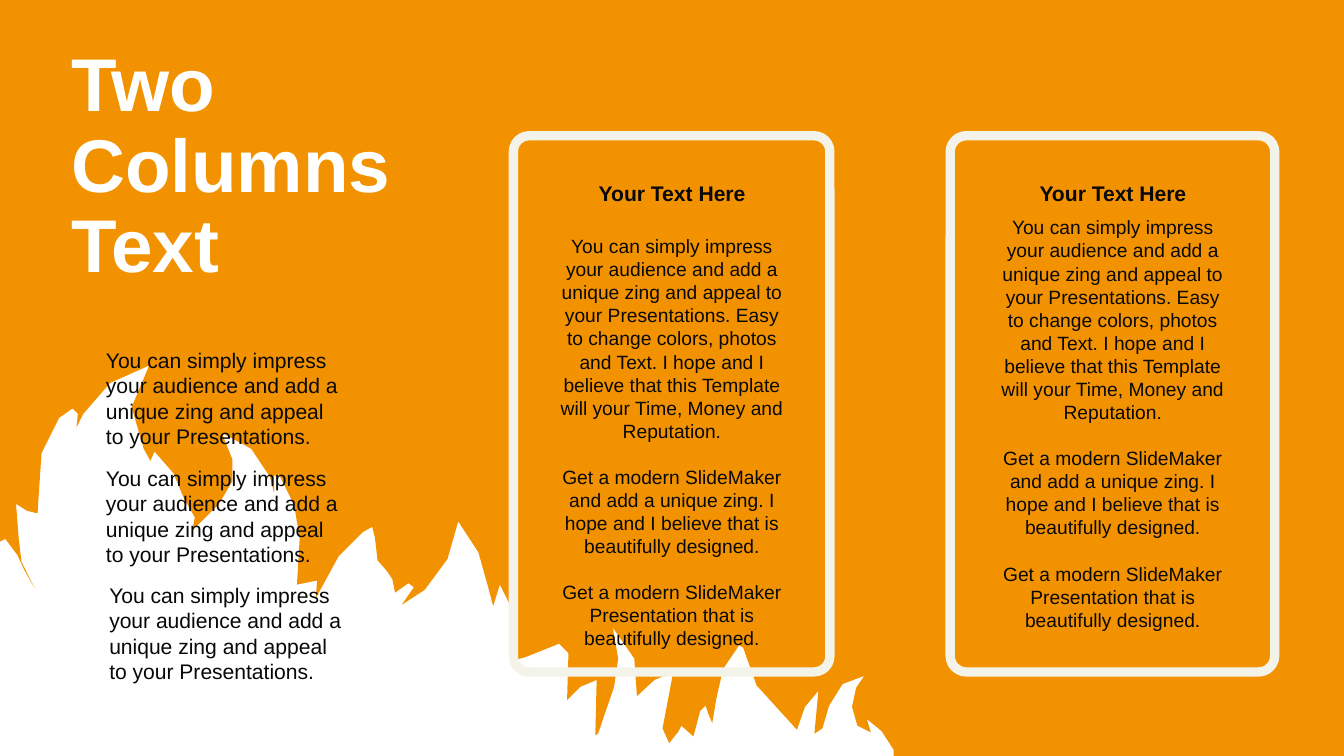
import lxml.etree
import pptx
import pptx.dml.color
import pptx.enum.shapes
import pptx.enum.text
import pptx.oxml.ns
import pptx.util

PX = 4572  # EMU per px, 200 px to the inch
WIDTH, HEIGHT = 2000, 1125
GRID = 2  # px per step of the flame outline
COLORS = {"orange": "F39200", "frame": "F3F3EA", "ink": "080808", "white": "FFFFFF"}
ALIGN = pptx.enum.text.PP_ALIGN
ANCHOR = pptx.enum.text.MSO_ANCHOR
SHAPE = pptx.enum.shapes.MSO_SHAPE

FLAME_EDGE = [
    (0, 403), (4, 401), (13, 413), (18, 424), (26, 438), (16, 418), (14, 401),
    (12, 375), (20, 380), (28, 382), (29, 366), (31, 337), (44, 311), (54, 304),
    (58, 308), (57, 318), (62, 308), (82, 285), (111, 272), (98, 303), (107, 334),
    (112, 343), (115, 336), (129, 352), (137, 371), (145, 385), (143, 395),
    (163, 375), (173, 358), (173, 342), (165, 322), (187, 334), (201, 355),
    (204, 367), (204, 354), (208, 354), (219, 376), (223, 401), (221, 435),
    (236, 432), (235, 445), (240, 436), (252, 414), (270, 396), (277, 392),
    (279, 400), (281, 417), (288, 425), (292, 431), (294, 441), (304, 434),
    (308, 437), (299, 450), (316, 439), (333, 416), (341, 388), (356, 411),
    (363, 436), (367, 451), (372, 435), (379, 449), (379, 480), (380, 492),
    (391, 489), (416, 479), (423, 486), (422, 521), (432, 511), (444, 506),
    (443, 547), (445, 546), (457, 511), (460, 490), (456, 467), (472, 490),
    (474, 518), (487, 506), (501, 500), (493, 542), (498, 553), (505, 544),
    (507, 540), (516, 548), (521, 529), (525, 525), (527, 531), (530, 538),
    (533, 520), (538, 498), (550, 480), (553, 482), (563, 510), (583, 532),
    (593, 543), (599, 526), (609, 514), (606, 546), (612, 542), (617, 525),
    (627, 509), (643, 503), (637, 512), (634, 526), (638, 540), (648, 545),
    (645, 535), (656, 544), (665, 558),
]

NOTE = ("You can simply impress your audience and add a unique zing "
        "and appeal to your Presentations.")
BODY = [
    "You can simply impress your audience and add a unique zing and appeal to your "
    "Presentations. Easy to change colors, photos and Text. I hope and I believe that "
    "this Template will your Time, Money and Reputation.",
    "Get a modern SlideMaker and add a unique zing. I hope and I believe that is "
    "beautifully designed.",
    "Get a modern SlideMaker Presentation that is beautifully designed.",
]


def rgb(name):
    return pptx.dml.color.RGBColor.from_string(COLORS[name])


def write(sp, box, lines, size, color="ink", bold=False, anchor=ANCHOR.TOP, **layout):
    """Place a text shape and fill it; layout holds paragraph attributes."""
    for name, value in zip(("left", "top", "width", "height"), box):
        setattr(sp, name, value * PX)
    tf = sp.text_frame
    tf.text = "\n".join(lines)
    tf.word_wrap = True
    tf.auto_size = pptx.enum.text.MSO_AUTO_SIZE.NONE
    tf.vertical_anchor = anchor
    for i, p in enumerate(tf.paragraphs):
        for name, value in layout.items():
            setattr(p, name, value)
        p.space_before = pptx.util.Pt(12.4 if i else 0)
        pPr = p._p.get_or_add_pPr()
        pPr.set("marL", "0")
        pPr.set("indent", "0")
        lxml.etree.SubElement(pPr, pptx.oxml.ns.qn("a:buNone"))
        font = p.runs[0].font
        for name, value in {"name": "Arial", "size": pptx.util.Pt(size), "bold": bold}.items():
            setattr(font, name, value)
        font.color.rgb = rgb(color)


prs = pptx.Presentation()
prs.slide_width, prs.slide_height = WIDTH * PX, HEIGHT * PX
s = prs.slides.add_slide(prs.slide_layouts.get_by_name("Two Content"))

# Orange field whose lower edge is cut by flames, sent behind the placeholders
edge = [(x * GRID, y * GRID) for x, y in FLAME_EDGE]
outline = s.shapes.build_freeform(0, 0, scale=PX)
outline.add_line_segments(edge + [(1330, HEIGHT), (WIDTH, HEIGHT), (WIDTH, 0)], close=True)
field = outline.convert_to_shape()
field.shadow.inherit = False
field.fill.solid()
field.fill.fore_color.rgb = rgb("orange")
field.line.fill.background()
tree = field.element.getparent()
tree.insert(2, field.element)

write(s.shapes.title, (86, 77, 556, 346), ["Two Columns Text"], 40, "white", True,
      ANCHOR.MIDDLE, alignment=ALIGN.LEFT, line_spacing=0.9)

# Cards: frame left, frame width, text left, body top
cards = [(764, 471, 811, 339), (1414, 483, 1467, 311)]
for idx, (left, width, text_left, body_top) in enumerate(cards, start=1):
    frame = s.shapes.add_shape(SHAPE.ROUNDED_RECTANGLE,
                               left * PX, 202 * PX, width * PX, 798 * PX)
    frame.adjustments[0] = 0.05
    frame.shadow.inherit = False
    frame.fill.background()
    frame.line.color.rgb = rgb("frame")
    frame.line.width = pptx.util.Pt(5)

    heading = s.shapes.add_textbox(0, 0, 0, 0)
    write(heading, (text_left, 258, 378, 58), ["Your Text Here"], 11.3, bold=True,
          alignment=ALIGN.CENTER)
    body = s.placeholders[idx]
    write(body, (text_left, body_top, 378, 648), BODY, 10.3, alignment=ALIGN.CENTER)
    tree.append(body.element)

for left, top in [(138, 507), (138, 683), (143, 857)]:
    note = s.shapes.add_textbox(0, 0, 0, 0)
    write(note, (left, top, 385, 172), [NOTE], 11.3, alignment=ALIGN.LEFT)

prs.save("out.pptx")
